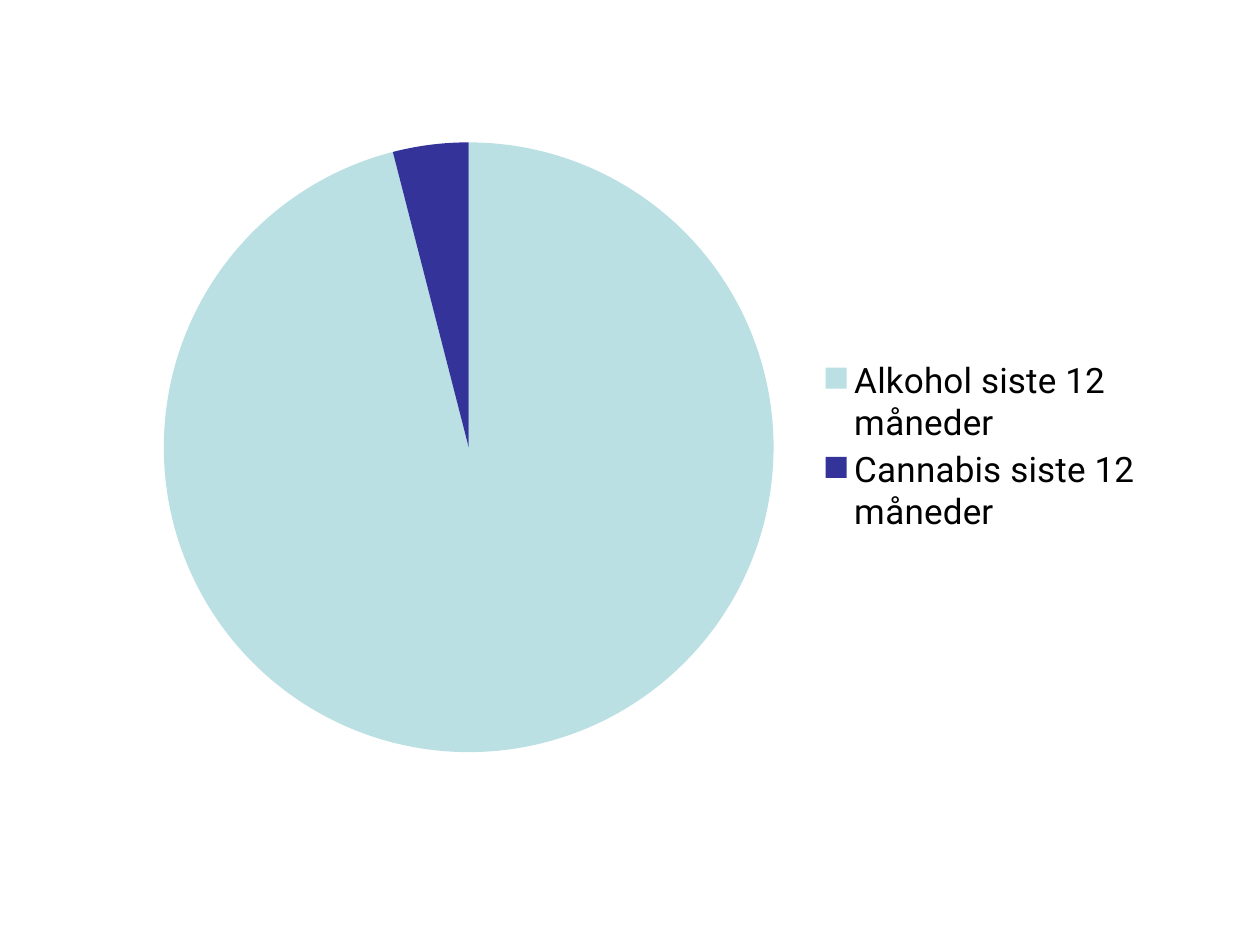
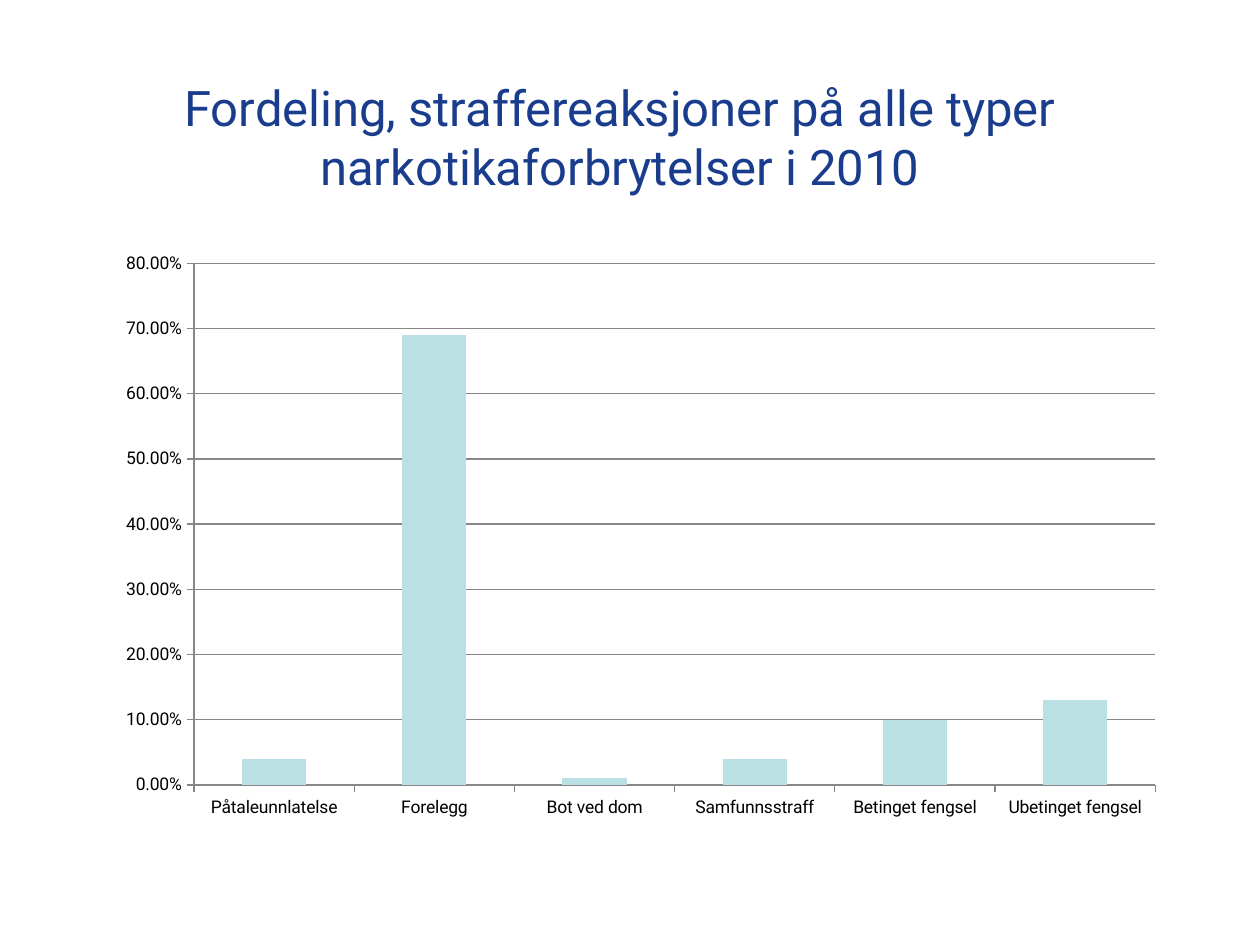
from lxml import etree
from pptx import Presentation
from pptx.chart.data import CategoryChartData
from pptx.dml.color import RGBColor
from pptx.enum.chart import XL_CHART_TYPE as CT, XL_LEGEND_POSITION as LP, XL_TICK_MARK as TM
from pptx.enum.text import MSO_ANCHOR, PP_ALIGN
from pptx.oxml.ns import qn
from pptx.util import Inches, Pt

FONT = "Roboto"
COLORS = {"title": "193C8D", "text": "000000", "light": "BBE0E3", "dark": "333399", "line": "878787"}
TITLE_ONLY, BLANK = 5, 6


def rgb(name):
    return RGBColor.from_string(COLORS[name])


def style_font(font, size, color):
    font.name, font.size = FONT, Pt(size)
    font.color.rgb = rgb(color)


def set_fill(fmt, color):
    fmt.fill.solid()
    fmt.fill.fore_color.rgb = rgb(color)


def place(parent, index, box, area, inner=False):
    """Fix a chart part at area, in slide inches, inside the chart's box."""
    for old in parent.findall(qn("c:layout")):
        parent.remove(old)
    layout = etree.Element(qn("c:layout"))
    parent.insert(index, layout)
    manual = etree.SubElement(layout, qn("c:manualLayout"))
    left, top, width, height = box
    x, y, w, h = area
    settings = [("layoutTarget", "inner")] if inner else []
    settings += [("xMode", "edge"), ("yMode", "edge"),
                 ("x", (x - left) / width), ("y", (y - top) / height),
                 ("w", w / width), ("h", h / height)]
    for tag, val in settings:
        etree.SubElement(manual, qn(f"c:{tag}")).set("val", str(val))


def add_title(s, text, box):
    sp = s.shapes.title
    sp.left, sp.top, sp.width, sp.height = map(Inches, box)
    tf = sp.text_frame
    tf.text = text
    tf.word_wrap = True
    tf.vertical_anchor = MSO_ANCHOR.MIDDLE
    p = tf.paragraphs[0]
    p.alignment = PP_ALIGN.CENTER
    style_font(p.runs[0].font, 28, "title")


def add_chart(s, kind, box, values, plot_area, number_format="General"):
    data = CategoryChartData(number_format=number_format)
    data.categories = list(values)
    data.add_series("Series 1", list(values.values()))
    chart = s.shapes.add_chart(kind, *map(Inches, box), data).chart
    chart.has_title = chart.has_legend = False
    style_font(chart.font, 10, "text")
    place(chart.element.find(".//" + qn("c:plotArea")), 0, box, plot_area, inner=True)
    return chart


def add_pie(s, box, values, colors, plot_area, legend_area):
    chart = add_chart(s, CT.PIE, box, values, plot_area)
    for i, color in enumerate(colors):
        set_fill(chart.plots[0].series[0].points[i].format, color)
    chart.has_legend = True
    legend = chart.legend
    legend.position = LP.RIGHT
    legend.include_in_layout = False
    style_font(legend.font, 20, "text")
    place(chart.element.find(".//" + qn("c:legend")), 1, box, legend_area)


def add_columns(s, box, values, plot_area):
    chart = add_chart(s, CT.COLUMN_CLUSTERED, box, values, plot_area, "0.00%")
    plot = chart.plots[0]
    plot.gap_width, plot.vary_by_categories = 150, False
    set_fill(plot.series[0].format, "light")
    # Axes and gridlines
    val_axis, cat_axis = chart.value_axis, chart.category_axis
    val_axis.minimum_scale, val_axis.maximum_scale, val_axis.major_unit = 0, 0.8, 0.1
    val_axis.tick_labels.number_format = "0.00%"
    val_axis.tick_labels.number_format_is_linked = False
    val_axis.has_major_gridlines = True
    for axis in (val_axis, cat_axis):
        axis.major_tick_mark, axis.minor_tick_mark = TM.OUTSIDE, TM.NONE
    for fmt in (val_axis.format, cat_axis.format, val_axis.major_gridlines.format):
        fmt.line.color.rgb = rgb("line")
        fmt.line.width = Pt(0.75)


def main():
    prs = Presentation()
    prs.slide_width, prs.slide_height = Inches(10), Inches(7.5)

    # Slide 1: use of alcohol and cannabis
    s = prs.slides.add_slide(prs.slide_layouts[BLANK])
    use = {"Alkohol siste 12 måneder": 96, "Cannabis siste 12 måneder": 4}
    add_pie(s, (0.98, 0.99, 8.19, 5.12), use, ("light", "dark"),
            plot_area=(1.3, 1.13, 4.84, 4.84), legend_area=(6.51, 2.82, 2.54, 1.46))

    # Slide 2: penal reactions
    s = prs.slides.add_slide(prs.slide_layouts[TITLE_ONLY])
    add_title(s, "Fordeling, straffereaksjoner på alle typer narkotikaforbrytelser i 2010",
              (0.67, 0.25, 8.5, 1.67))
    reactions = {
        "Påtaleunnlatelse": 0.04,
        "Forelegg": 0.69,
        "Bot ved dom": 0.01,
        "Samfunnsstraff": 0.04,
        "Betinget fengsel": 0.1,
        "Ubetinget fengsel": 0.13,
    }
    add_columns(s, (0.83, 1.92, 8.5, 4.67), reactions, plot_area=(1.54, 2.09, 7.63, 4.14))

    prs.save("out.pptx")


if __name__ == "__main__":
    main()
